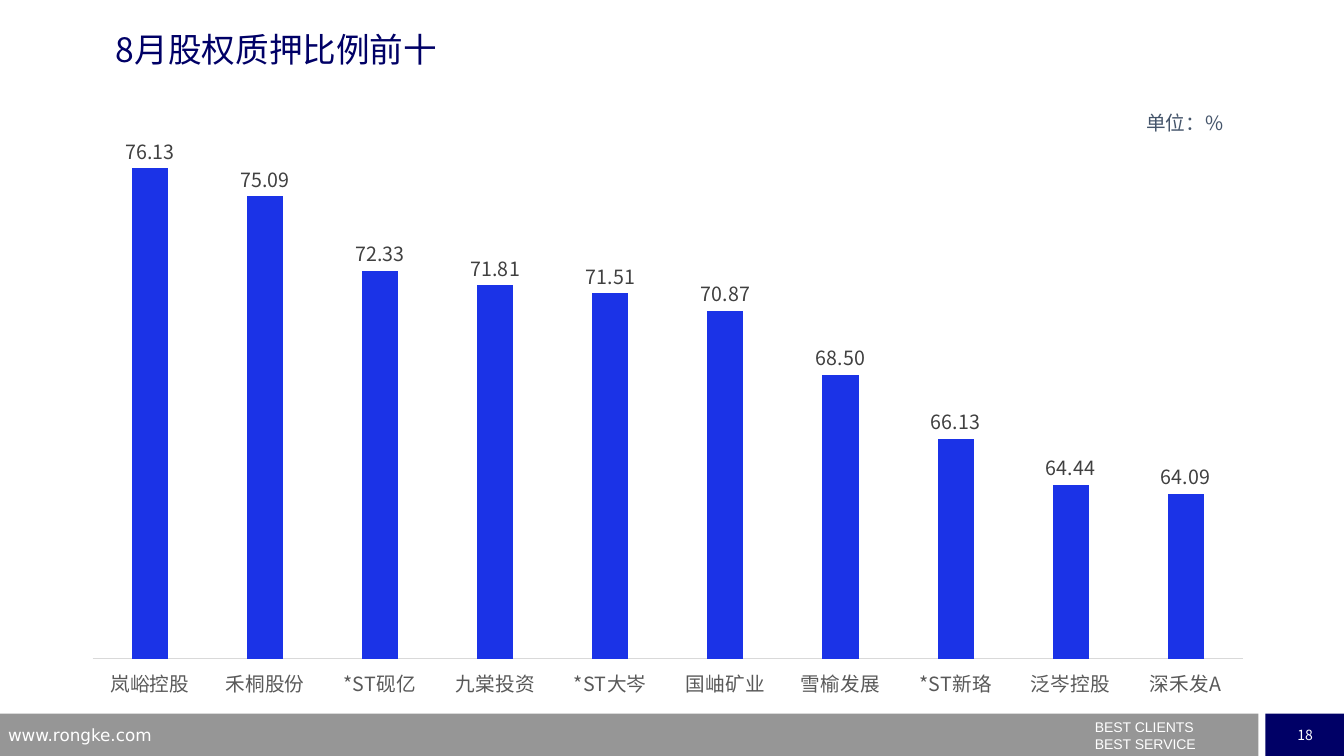
from dataclasses import dataclass

from lxml import etree
from pptx import Presentation
from pptx.chart.data import CategoryChartData
from pptx.dml.color import RGBColor
from pptx.enum.chart import XL_CHART_TYPE, XL_LABEL_POSITION, XL_TICK_LABEL_POSITION, XL_TICK_MARK
from pptx.enum.shapes import MSO_SHAPE
from pptx.enum.text import MSO_ANCHOR, PP_ALIGN
from pptx.oxml import parse_xml
from pptx.oxml.ns import nsdecls, qn
from pptx.util import Inches, Pt

COLUMNS = XL_CHART_TYPE.COLUMN_CLUSTERED
OUTSIDE = XL_LABEL_POSITION.OUTSIDE_END
LOW = XL_TICK_LABEL_POSITION.LOW
NO_TICK = XL_TICK_MARK.NONE
RECTANGLE = MSO_SHAPE.RECTANGLE
TOP, MIDDLE = MSO_ANCHOR.TOP, MSO_ANCHOR.MIDDLE
LEFT, CENTER = PP_ALIGN.LEFT, PP_ALIGN.CENTER

CJK, ARIAL, DEJAVU = "Noto Sans CJK SC", "Arial", "DejaVu Sans"
COLORS = {"navy": "000066", "gray": "969696", "white": "FFFFFF", "slate": "44546A",
          "bar": "1B33E7", "label": "404040", "category": "595959", "axis": "D9D9D9"}
PLEDGE_RATIOS = {
    "岚峪控股": 76.13, "禾桐股份": 75.09, "*ST砚亿": 72.33, "九棠投资": 71.81,
    "*ST大岑": 71.51, "国岫矿业": 70.87, "雪榆发展": 68.50, "*ST新珞": 66.13,
    "泛岑控股": 64.44, "深禾发A": 64.09,
}


@dataclass
class Frame:
    left: float
    top: float
    width: float
    height: float

    def lengths(self) -> tuple:
        return tuple(Inches(v) for v in (self.left, self.top, self.width, self.height))


@dataclass
class Label:
    frame: Frame
    lines: list[str]
    size: float
    font: str
    color: str
    inset: float = 0.1
    spacing: float = 1.0


@dataclass
class Band:
    frame: Frame
    color: str


LABELS = [
    Label(Frame(10.76, 7.08, 2.5, 0.42), ["BEST CLIENTS", "BEST SERVICE"], 10, ARIAL, "white"),
    Label(Frame(0, 7.14, 3.2, 0.26), ["www.rongke.com"], 12, DEJAVU, "white", 0.08),
    Label(Frame(11.37, 1.14, 0.8, 0.45), ["单位：%"], 14, CJK, "slate", 0, 0.8),
]
FOOTER_BAR = Band(Frame(0, 7.08, 12.48, 0.42), "gray")
NUMBER_BAR = Band(Frame(12.55, 7.08, 0.79, 0.42), "navy")


def rgb(name: str) -> RGBColor:
    return RGBColor.from_string(COLORS[name])


def style_font(font, size: float, name: str, color: str) -> None:
    font.size, font.name, font.bold = Pt(size), name, False
    font.color.rgb = rgb(color)


def write_lines(text_frame, lines: list[str], size: float, font: str, color: str,
                inset: float = 0, spacing: float = 1.0, align=LEFT, anchor=TOP) -> None:
    text_frame.word_wrap = True
    text_frame.vertical_anchor = anchor
    text_frame.margin_left = text_frame.margin_right = Inches(inset)
    text_frame.margin_top = text_frame.margin_bottom = Inches(min(inset, 0.05))
    for index, line in enumerate(lines):
        para = text_frame.add_paragraph() if index else text_frame.paragraphs[0]
        para.alignment, para.line_spacing = align, spacing
        span = para.add_run()
        span.text = line
        style_font(span.font, size, font, color)


def add_band(page, band: Band):
    box = page.shapes.add_shape(RECTANGLE, *band.frame.lengths())
    box.shadow.inherit = False
    box.fill.solid()
    box.fill.fore_color.rgb = rgb(band.color)
    box.line.fill.background()
    return box


def add_label(page, label: Label) -> None:
    box = page.shapes.add_textbox(*label.frame.lengths())
    write_lines(box.text_frame, label.lines, label.size, label.font, label.color,
                label.inset, label.spacing)


def add_ratio_chart(page, frame: Frame):
    data = CategoryChartData(number_format="#,##0.00")
    data.categories = list(PLEDGE_RATIOS)
    data.add_series("质押比例", list(PLEDGE_RATIOS.values()))
    chart = page.shapes.add_chart(COLUMNS, *frame.lengths(), data).chart
    chart.has_legend = chart.has_title = False
    chart.font.size, chart.font.name = Pt(14), CJK

    # Columns and their values
    plot = chart.plots[0]
    plot.gap_width, plot.overlap, plot.vary_by_categories = 219, -27, False
    fill = plot.series[0].format.fill
    fill.solid()
    fill.fore_color.rgb = rgb("bar")
    plot.has_data_labels = True
    labels = plot.data_labels
    labels.show_value, labels.position = True, OUTSIDE
    labels.number_format, labels.number_format_is_linked = "#,##0.00", False
    style_font(labels.font, 14, CJK, "label")

    # Axes
    names = chart.category_axis
    names.major_tick_mark = names.minor_tick_mark = NO_TICK
    names.tick_label_position = LOW
    names.format.line.color.rgb = rgb("axis")
    names.format.line.width = Pt(0.75)
    style_font(names.tick_labels.font, 14, CJK, "category")
    values = chart.value_axis
    values.minimum_scale, values.maximum_scale = 58, 78
    values.has_major_gridlines = values.visible = False

    # Plot area within the chart frame
    area = chart._chartSpace.find(".//" + qn("c:plotArea"))
    for old in area.findall(qn("c:layout")):
        area.remove(old)
    layout = parse_xml(f'<c:layout {nsdecls("c")}><c:manualLayout/></c:layout>')
    settings = {"layoutTarget": "inner", "xMode": "edge", "yMode": "edge",
                "x": 0.02, "y": 0.02, "w": 0.96, "h": 0.91}
    for tag, value in settings.items():
        etree.SubElement(layout[0], qn(f"c:{tag}")).set("val", str(value))
    area.insert(0, layout)
    return chart


def match_east_asian_fonts(root) -> None:
    for latin in list(root.iter(qn("a:latin"))):
        east_asian = etree.Element(qn("a:ea"))
        east_asian.set("typeface", latin.get("typeface"))
        latin.addnext(east_asian)


def main() -> None:
    deck = Presentation()
    deck.slide_width, deck.slide_height = Inches(13.33), Inches(7.5)
    page = deck.slides.add_slide(deck.slide_layouts[5])

    # Footer bands and page number
    add_band(page, FOOTER_BAR)
    number = add_band(page, NUMBER_BAR)
    write_lines(number.text_frame, ["18"], 10, CJK, "white", align=CENTER, anchor=MIDDLE)

    # Title
    title = page.shapes.title
    title.left, title.top, title.width, title.height = Frame(1.15, 0.28, 9, 0.42).lengths()
    write_lines(title.text_frame, ["8月股权质押比例前十"], 24, CJK, "navy", anchor=MIDDLE)

    # Chart and labels
    chart = add_ratio_chart(page, Frame(0.68, 1.05, 11.89, 5.9))
    for label in LABELS:
        add_label(page, label)
    for root in (page.shapes.element, chart._chartSpace):
        match_east_asian_fonts(root)

    deck.save("out.pptx")


if __name__ == "__main__":
    main()
